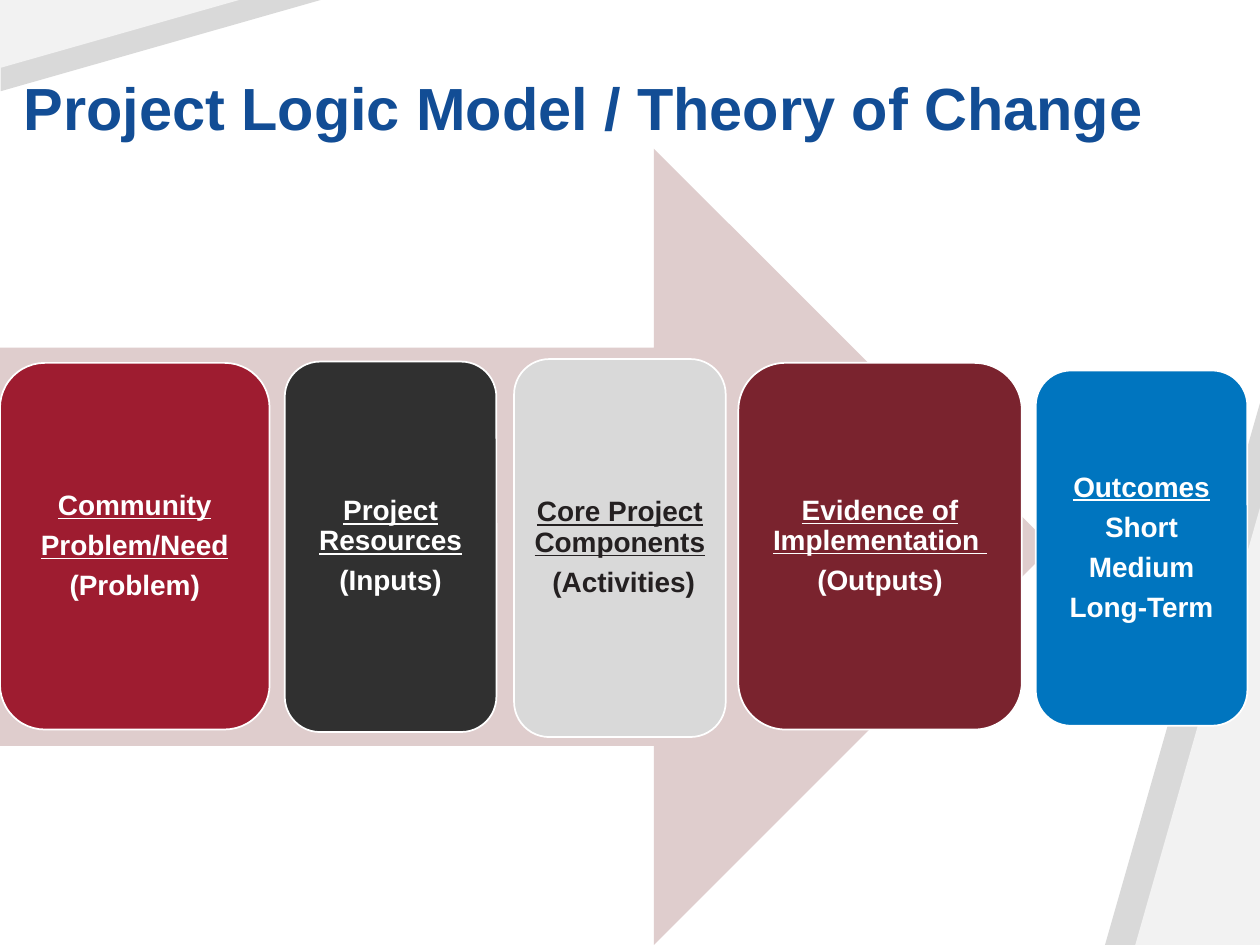
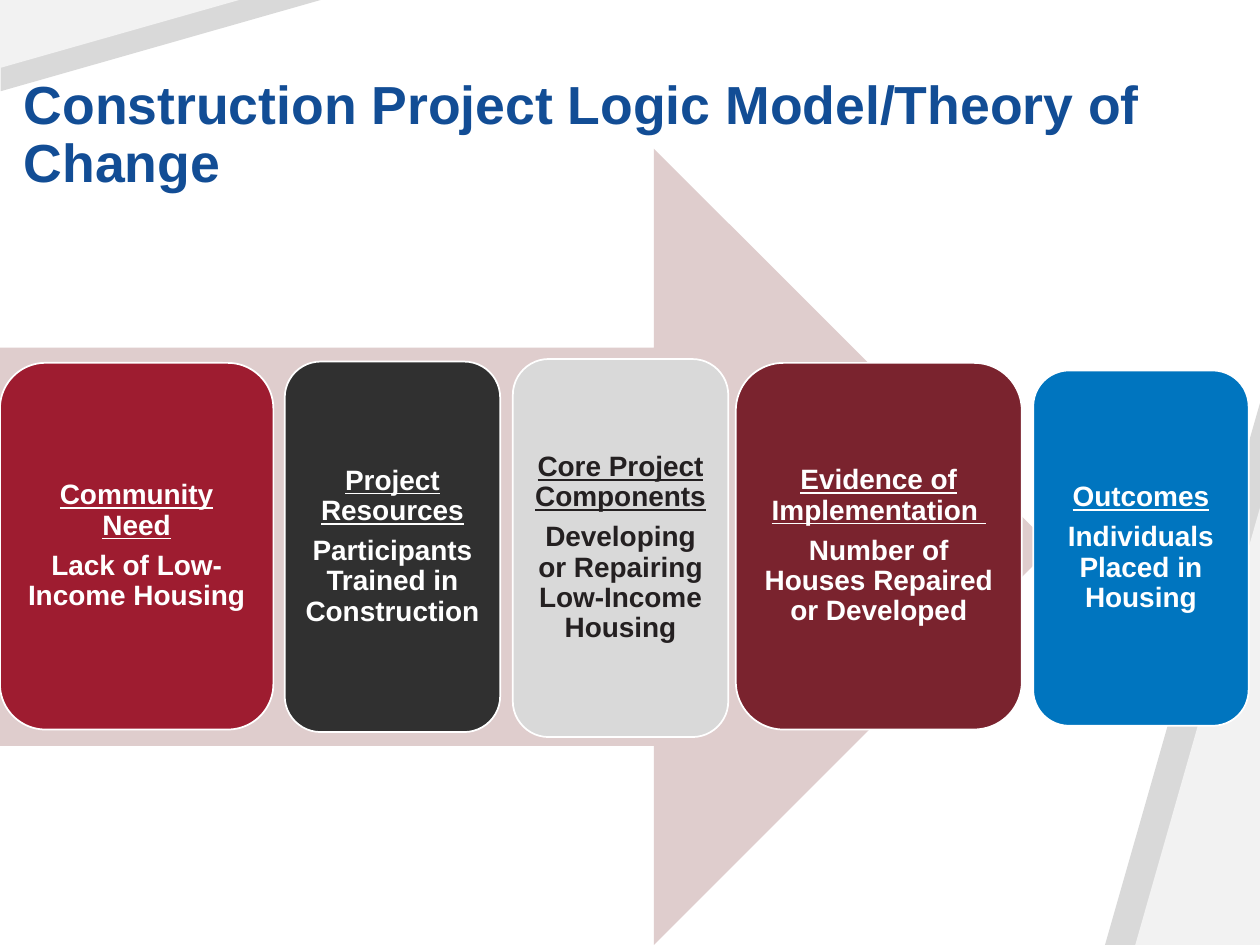
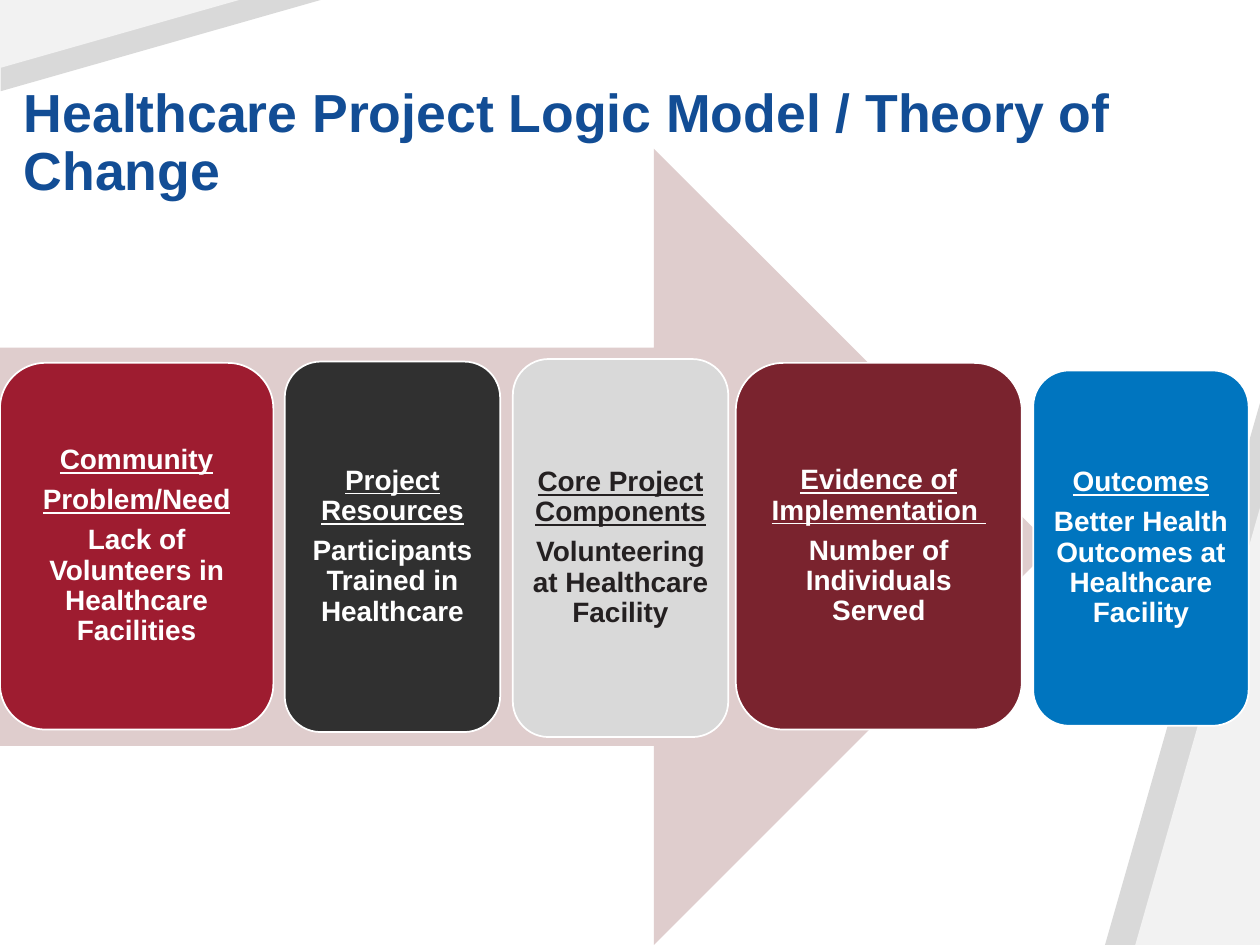
from dataclasses import dataclass

from pptx import Presentation
from pptx.dml.color import RGBColor as Rgb
from pptx.enum.shapes import MSO_SHAPE as Kind
from pptx.enum.text import MSO_ANCHOR as Anchor, PP_ALIGN as Align
from pptx.util import Inches, Pt


@dataclass(frozen=True)
class Theme:
    font: str = "Arial"
    title: str = "124D95"
    edge: str = "FFFFFF"
    band: str = "D9D9D9"
    pale: str = "F2F2F2"
    arrow: str = "DFCDCD"
    body: float = 16
    gap: float = 5.6
    lead: float = 0.9
    inset: float = 0.07


THEME = Theme()

# Content: title, size, title top, card spans, then (underlined, plain) per card
WIDE = [(0, 2.17), (2.26, 1.71), (4.07, 1.71), (5.84, 2.27), (8.2, 1.71)]
SLIM = [(0, 2.14), (2.26, 1.68), (4.08, 1.68), (5.86, 2.25), (8.22, 1.68)]
NEED = ["Community", "Problem/Need"]
INPUT = ["Project Resources"]
CORE = ["Core Project Components"]
PROOF = ["Evidence of Implementation "]
GOAL = ["Outcomes"]

SLIDES = [
    dict(title="Project Logic Model / Theory of Change",
         size=34, top=0.33, spans=SLIM,
         cards=[(NEED, ["(Problem)"]),
                (INPUT, ["(Inputs)"]),
                (CORE, [" (Activities)"]),
                (PROOF, ["(Outputs)"]),
                (GOAL, ["Short", "Medium", "Long-Term"])]),
    dict(title="Construction Project Logic Model/Theory of Change",
         size=30.6, top=0.73, spans=WIDE,
         cards=[(["Community Need"], ["Lack of Low-Income Housing"]),
                (INPUT, ["Participants Trained in Construction"]),
                (CORE, ["Developing or Repairing Low-Income Housing"]),
                (PROOF, ["Number of Houses Repaired or Developed"]),
                (GOAL, ["Individuals Placed in Housing"])]),
    dict(title="Healthcare Project Logic Model / Theory of Change",
         size=30.6, top=0.79, spans=WIDE,
         cards=[(NEED, ["Lack of Volunteers in Healthcare Facilities"]),
                (INPUT, ["Participants Trained in Healthcare"]),
                (CORE, ["Volunteering at Healthcare Facility"]),
                (PROOF, ["Number of Individuals Served"]),
                (GOAL, ["Better Health Outcomes at Healthcare Facility"])]),
]

# Card looks: top, height, fill, text colour
LOOKS = [(2.88, 2.91, "9E1C30", "FFFFFF"),
         (2.87, 2.94, "303030", "FFFFFF"),
         (2.85, 3.0, "D9D9D9", "242021"),
         (2.88, 2.91, "7A232E", "FFFFFF"),
         (2.94, 2.82, "0075BF", "FFFFFF")]

# Corner wedges: box, fill, whether turned into the top left corner
WEDGES = [((8.77, 3.2, 1.23, 4.3), THEME.band, False),
          ((9.01, 4.03, 0.99, 3.47), THEME.pale, False),
          ((0.92, -0.92, 0.73, 2.56), THEME.band, True),
          ((0.68, -0.68, 0.54, 1.9), THEME.pale, True)]


def put(obj, values):
    for name, value in values.items():
        setattr(obj, name, value)


def draw(slide, kind, box, fill):
    shape = slide.shapes.add_shape(kind, *map(Inches, box))
    shape.shadow.inherit = False
    shape.fill.solid()
    shape.fill.fore_color.rgb = Rgb.from_string(fill)
    shape.line.fill.background()
    return shape


def write(para, text, size, color, **form):
    para.line_spacing = THEME.lead
    run = para.add_run()
    run.text = text
    put(run.font, dict(name=THEME.font, size=Pt(size), bold=True, **form))
    run.font.color.rgb = Rgb.from_string(color)


def add_decor(slide):
    for box, fill, turned in WEDGES:
        wedge = draw(slide, Kind.ISOSCELES_TRIANGLE, box, fill)
        wedge.adjustments[0] = 1
        if turned:
            wedge.rotation = 270
            wedge._element.spPr.xfrm.set("flipV", "1")


def add_card(slide, span, look, words):
    left, width = span
    top, height, fill, color = look
    card = draw(slide, Kind.ROUNDED_RECTANGLE, (left, top, width, height), fill)
    card.line.color.rgb = Rgb.from_string(THEME.edge)
    card.line.width = Pt(1)
    frame = card.text_frame
    sides = ("left", "top", "right", "bottom")
    put(frame, {f"margin_{side}": Inches(THEME.inset) for side in sides})
    put(frame, dict(word_wrap=True, vertical_anchor=Anchor.MIDDLE))
    heads, plain = words
    for i, text in enumerate(heads + plain):
        para = frame.add_paragraph() if i else frame.paragraphs[0]
        put(para, dict(alignment=Align.CENTER, space_after=Pt(THEME.gap)))
        write(para, text, THEME.body, color, underline=i < len(heads))


def add_title(slide, text, size, top):
    box = slide.shapes.add_textbox(*map(Inches, (0.09, top, 9.71, 0.86)))
    put(box.text_frame, dict(word_wrap=True, vertical_anchor=Anchor.BOTTOM))
    write(box.text_frame.paragraphs[0], text, size, THEME.title)


def main():
    deck = Presentation()
    put(deck, dict(slide_width=Inches(10), slide_height=Inches(7.5)))
    for item in SLIDES:
        slide = deck.slides.add_slide(deck.slide_layouts[6])
        add_decor(slide)
        draw(slide, Kind.RIGHT_ARROW, (0, 1.18, 8.35, 6.32), THEME.arrow)
        for card in zip(item["spans"], LOOKS, item["cards"]):
            add_card(slide, *card)
        add_title(slide, item["title"], item["size"], item["top"])
    deck.save("out.pptx")


if __name__ == "__main__":
    main()
